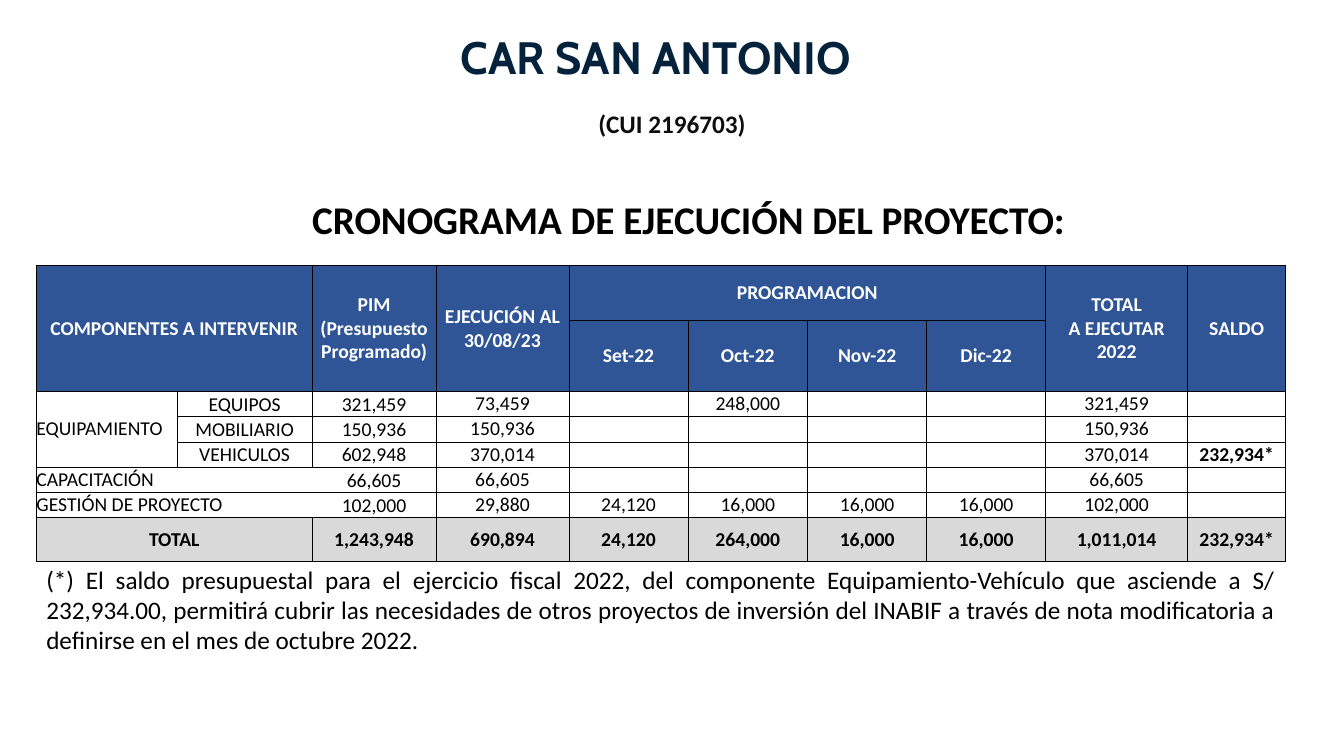
from dataclasses import dataclass

from lxml import etree
from pptx import Presentation
from pptx import util as u
from pptx.dml.color import RGBColor
from pptx.enum import text
from pptx.oxml import ns

Pt = u.Pt
ALIGN = text.PP_ALIGN
ANCHOR = text.MSO_ANCHOR


# Colours, fonts and type sizes
@dataclass(frozen=True)
class Theme:
    heading_font: str = "Cabin"
    body_font: str = "Calibri"
    navy: str = "05223C"
    charcoal: str = "0D0D0D"
    black: str = "000000"
    white: str = "FFFFFF"
    header_blue: str = "2F5597"
    total_grey: str = "D9D9D9"
    title_size: float = 32.4
    section_size: float = 28
    text_size: float = 18
    table_size: float = 14
    border: float = 0.5


THEME = Theme()

# Budget schedule: None marks an empty or merged-over cell
COLUMN_WIDTHS = [100.5, 96.5, 88.5, 95, 85, 85.5, 85, 85, 101.5, 70]
ROW_HEIGHTS = [39, 37.5] + [18] * 5 + [31.5]
HEADER_ROWS = 2
SCHEDULE = [
    ["COMPONENTES A INTERVENIR", None, "PIM\n(Presupuesto Programado)",
     "EJECUCIÓN AL 30/08/23", "PROGRAMACION", None, None, None,
     "TOTAL\nA EJECUTAR\n2022", "SALDO"],
    [None, None, None, None, "Set-22", "Oct-22", "Nov-22", "Dic-22", None, None],
    ["EQUIPAMIENTO", "EQUIPOS", "321,459", "73,459",
     None, "248,000", None, None, "321,459", None],
    [None, "MOBILIARIO", "150,936", "150,936",
     None, None, None, None, "150,936", None],
    [None, "VEHICULOS", "602,948", "370,014",
     None, None, None, None, "370,014", "232,934*"],
    ["CAPACITACIÓN", None, "66,605", "66,605",
     None, None, None, None, "66,605", None],
    ["GESTIÓN DE PROYECTO", None, "102,000", "29,880",
     "24,120", "16,000", "16,000", "16,000", "102,000", None],
    ["TOTAL", None, "1,243,948", "690,894",
     "24,120", "264,000", "16,000", "16,000", "1,011,014", "232,934*"],
]
TOTAL_ROW = len(SCHEDULE) - 1
BALANCE_COLUMN = len(COLUMN_WIDTHS) - 1
OPEN_ROWS = (5, 6)  # component rows with no line before the PIM figure

# (first row, first column, last row, last column)
MERGES = [(0, 0, 1, 1), (0, 2, 1, 2), (0, 3, 1, 3), (0, 4, 0, 7),
          (0, 8, 1, 8), (0, 9, 1, 9), (2, 0, 4, 0),
          (5, 0, 5, 1), (6, 0, 6, 1), (7, 0, 7, 1)]

NOTE = ("(*) El saldo presupuestal para el ejercicio fiscal 2022, del componente "
        "Equipamiento-Vehículo que asciende a S/ 232,934.00, permitirá cubrir las "
        "necesidades de otros proyectos de inversión del INABIF a través de nota "
        "modificatoria a definirse en el mes de octubre 2022.")


def add_run(paragraph, wording, size, color, bold=False, font=THEME.body_font):
    run = paragraph.add_run()
    run.text = wording
    run.font.name = font
    run.font.size = Pt(size)
    run.font.bold = bold
    run.font.color.rgb = RGBColor.from_string(color)


def fill_placeholder(holder, box, wording, align, anchor, **style):
    holder.left, holder.top, holder.width, holder.height = map(Pt, box)
    frame = holder.text_frame
    frame.auto_size = text.MSO_AUTO_SIZE.NONE
    frame.vertical_anchor = anchor
    paragraph = frame.paragraphs[0]
    paragraph.alignment = align
    paragraph.line_spacing = 0.9
    paragraph.space_before = Pt(0)
    add_run(paragraph, wording, **style)


def add_text(slide, box, wording, align, **style):
    frame = slide.shapes.add_textbox(*map(Pt, box)).text_frame
    frame.word_wrap = True
    paragraph = frame.paragraphs[0]
    paragraph.alignment = align
    add_run(paragraph, wording, **style)


def set_borders(cell, sides):
    """Draw the named sides; the fill must be set afterwards."""
    properties = cell._tc.get_or_add_tcPr()
    for side in "LRTB":
        line = etree.SubElement(properties, ns.qn(f"a:ln{side}"))
        if side in sides:
            line.set("w", str(Pt(THEME.border)))
            solid = etree.SubElement(line, ns.qn("a:solidFill"))
            etree.SubElement(solid, ns.qn("a:srgbClr"), val=THEME.black)
        else:
            line.set("w", "0")
            etree.SubElement(line, ns.qn("a:noFill"))


def cell_look(row, column):
    """Return fill, text colour and weight for a schedule cell."""
    if row < HEADER_ROWS:
        return THEME.header_blue, THEME.white, True
    if row == TOTAL_ROW:
        return THEME.total_grey, THEME.black, True
    return THEME.white, THEME.black, column == BALANCE_COLUMN


def cell_sides(row, column):
    if row in OPEN_ROWS and column < 3:
        return {0: "LTB", 1: "TB", 2: "RTB"}[column]
    return "LRTB"


def write_cell(cell, row, column, wording):
    fill, color, bold = cell_look(row, column)
    in_body = HEADER_ROWS <= row < TOTAL_ROW
    cell.margin_left = cell.margin_right = cell.margin_top = cell.margin_bottom = 0
    cell.vertical_anchor = (
        ANCHOR.BOTTOM if in_body and column in (1, 2) else ANCHOR.MIDDLE)
    set_borders(cell, cell_sides(row, column))
    cell.fill.solid()
    cell.fill.fore_color.rgb = RGBColor.from_string(fill)

    frame = cell.text_frame
    if wording is None:
        # Keeps empty cells from stretching their row
        etree.SubElement(frame.paragraphs[0]._p, ns.qn("a:endParaRPr"),
                         sz=str(THEME.table_size * 100))
        return
    for index, line in enumerate(wording.split("\n")):
        paragraph = frame.add_paragraph() if index else frame.paragraphs[0]
        paragraph.alignment = ALIGN.LEFT if in_body and column == 0 else ALIGN.CENTER
        add_run(paragraph, line, THEME.table_size, color, bold)


def add_schedule(slide, left, top):
    frame = slide.shapes.add_table(
        len(ROW_HEIGHTS), len(COLUMN_WIDTHS), Pt(left), Pt(top),
        Pt(sum(COLUMN_WIDTHS)), Pt(sum(ROW_HEIGHTS)))
    schedule = frame.table
    schedule.first_row = schedule.horz_banding = False
    for column, width in zip(schedule.columns, COLUMN_WIDTHS):
        column.width = Pt(width)
    for row, height in zip(schedule.rows, ROW_HEIGHTS):
        row.height = Pt(height)
    for r, entries in enumerate(SCHEDULE):
        for c, wording in enumerate(entries):
            write_cell(schedule.cell(r, c), r, c, wording)
    for top_row, first, bottom_row, last in MERGES:
        schedule.cell(top_row, first).merge(schedule.cell(bottom_row, last))


def main():
    deck = Presentation()
    deck.slide_width, deck.slide_height = Pt(960), Pt(540)
    slide = deck.slides.add_slide(deck.slide_layouts[2])

    # Project name and code
    project_name, project_code = slide.placeholders
    fill_placeholder(project_name, (322, 6, 317, 57.5), "CAR SAN ANTONIO",
                     ALIGN.LEFT, ANCHOR.BOTTOM, size=THEME.title_size,
                     color=THEME.navy, bold=True, font=THEME.heading_font)
    fill_placeholder(project_code, (386, 76.5, 188, 27.5), "(CUI 2196703)",
                     ALIGN.CENTER, ANCHOR.TOP, size=THEME.text_size,
                     color=THEME.charcoal, bold=True)

    # Schedule with its heading and footnote
    add_schedule(slide, 26, 189.5)
    add_text(slide, (26, 399.5, 892, 72.5), NOTE, ALIGN.JUSTIFY,
             size=THEME.text_size, color=THEME.black)
    add_text(slide, (113, 136, 757.5, 41), "CRONOGRAMA DE EJECUCIÓN DEL PROYECTO:",
             ALIGN.CENTER, size=THEME.section_size, color=THEME.black, bold=True)

    deck.save("out.pptx")


if __name__ == "__main__":
    main()
